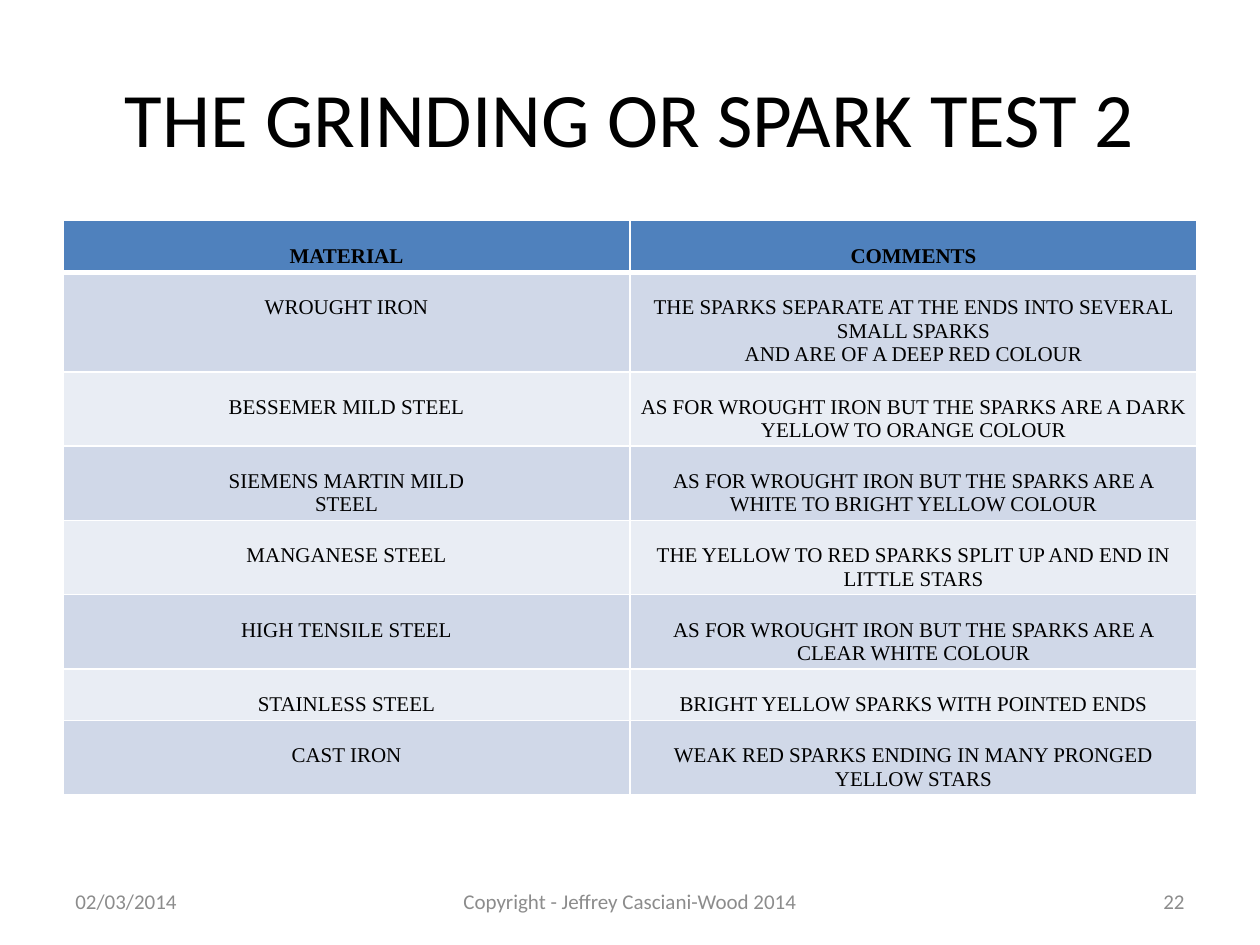
from lxml import etree
from pptx import Presentation
from pptx.dml.color import RGBColor
from pptx.enum.text import MSO_ANCHOR, PP_ALIGN
from pptx.oxml.ns import qn
from pptx.util import Cm, Pt

LEFT, CENTER, RIGHT = PP_ALIGN.LEFT, PP_ALIGN.CENTER, PP_ALIGN.RIGHT
MIDDLE = MSO_ANCHOR.MIDDLE

BLACK, GREY, WHITE = "000000", "8C8C8C", "FFFFFF"
HEADER_FILL = "4F81BD"
BAND_FILLS = ("D0D8E8", "E9EDF4")

# A newline starts a new paragraph in the cell
ROWS = [
    ("MATERIAL", "COMMENTS"),
    ("WROUGHT IRON",
     "THE SPARKS SEPARATE AT THE ENDS INTO SEVERAL SMALL SPARKS\n"
     "AND ARE OF A DEEP RED COLOUR"),
    ("BESSEMER MILD STEEL",
     "AS FOR WROUGHT IRON BUT THE SPARKS ARE A DARK YELLOW TO ORANGE COLOUR"),
    ("SIEMENS MARTIN MILD\nSTEEL",
     "AS FOR WROUGHT IRON BUT THE SPARKS ARE A WHITE TO BRIGHT YELLOW COLOUR"),
    ("MANGANESE STEEL",
     "THE YELLOW TO RED SPARKS SPLIT UP AND END IN LITTLE STARS"),
    ("HIGH TENSILE STEEL",
     "AS FOR WROUGHT IRON BUT THE SPARKS ARE A CLEAR WHITE COLOUR"),
    ("STAINLESS STEEL", "BRIGHT YELLOW SPARKS WITH POINTED ENDS"),
    ("CAST IRON", "WEAK RED SPARKS ENDING IN MANY PRONGED YELLOW STARS"),
]


def color(hex_string):
    return RGBColor.from_string(hex_string)


def format_text(text_frame, size, font_name, font_color, alignment, bold=False):
    for paragraph in text_frame.paragraphs:
        paragraph.alignment = alignment
        for run in paragraph.runs:
            run.font.size = Pt(size)
            run.font.name = font_name
            run.font.bold = bold
            run.font.color.rgb = color(font_color)


def add_text(slide, box, text, size, font_color, alignment):
    shape = slide.shapes.add_textbox(*box)
    text_frame = shape.text_frame
    text_frame.word_wrap = True
    text_frame.vertical_anchor = MIDDLE
    text_frame.text = text
    format_text(text_frame, size, "Calibri", font_color, alignment)


def set_borders(cell, widths):
    properties = cell._tc.get_or_add_tcPr()
    for side, width in widths.items():
        line = etree.SubElement(properties, qn(f"a:ln{side}"), w=str(Pt(width)))
        fill = etree.SubElement(line, qn("a:solidFill"))
        etree.SubElement(fill, qn("a:srgbClr"), val=WHITE)


def add_spark_table(slide, box):
    left, top, width, row_height = box
    table = slide.shapes.add_table(
        len(ROWS), 2, left, top, width, row_height * len(ROWS)).table
    for row_index, texts in enumerate(ROWS):
        is_header = row_index == 0
        table.rows[row_index].height = row_height
        for column_index, text in enumerate(texts):
            cell = table.cell(row_index, column_index)
            cell.margin_left = cell.margin_right = Cm(0.18)
            # One empty line of room above the text
            cell.margin_top, cell.margin_bottom = Cm(0.48), 0
            cell.text_frame.text = text
            format_text(cell.text_frame, 12, "Times New Roman", BLACK,
                        CENTER, bold=is_header)
            set_borders(cell, {"L": 1, "R": 1,
                               "T": 3 if row_index == 1 else 1,
                               "B": 3 if is_header else 1})
            cell.fill.solid()
            cell.fill.fore_color.rgb = color(
                HEADER_FILL if is_header else BAND_FILLS[(row_index - 1) % 2])


def add_footer(slide, box):
    left, top, width, height = box
    side_width, center_width = Cm(5.93), Cm(8.04)
    parts = [
        ("02/03/2014", 0, side_width, LEFT),
        ("Copyright - Jeffrey Casciani-Wood 2014",
         (width - center_width) // 2, center_width, CENTER),
        ("22", width - side_width, side_width, RIGHT),
    ]
    for text, offset, part_width, alignment in parts:
        add_text(slide, (left + offset, top, part_width, height),
                 text, 12, GREY, alignment)


def main():
    presentation = Presentation()
    presentation.slide_width, presentation.slide_height = Cm(25.4), Cm(19.05)
    slide = presentation.slides.add_slide(presentation.slide_layouts[6])
    margin, content_width = Cm(1.27), Cm(22.86)

    # Title
    add_text(slide, (margin, Cm(0.76), content_width, Cm(3.18)),
             "THE GRINDING OR SPARK TEST 2", 44, BLACK, CENTER)
    # Materials and their sparks
    add_spark_table(slide, (margin, Cm(4.45), content_width, Cm(1.04)))
    # Date, copyright and slide number
    add_footer(slide, (margin, Cm(17.65), content_width, Cm(1.02)))

    presentation.save("out.pptx")


if __name__ == "__main__":
    main()
